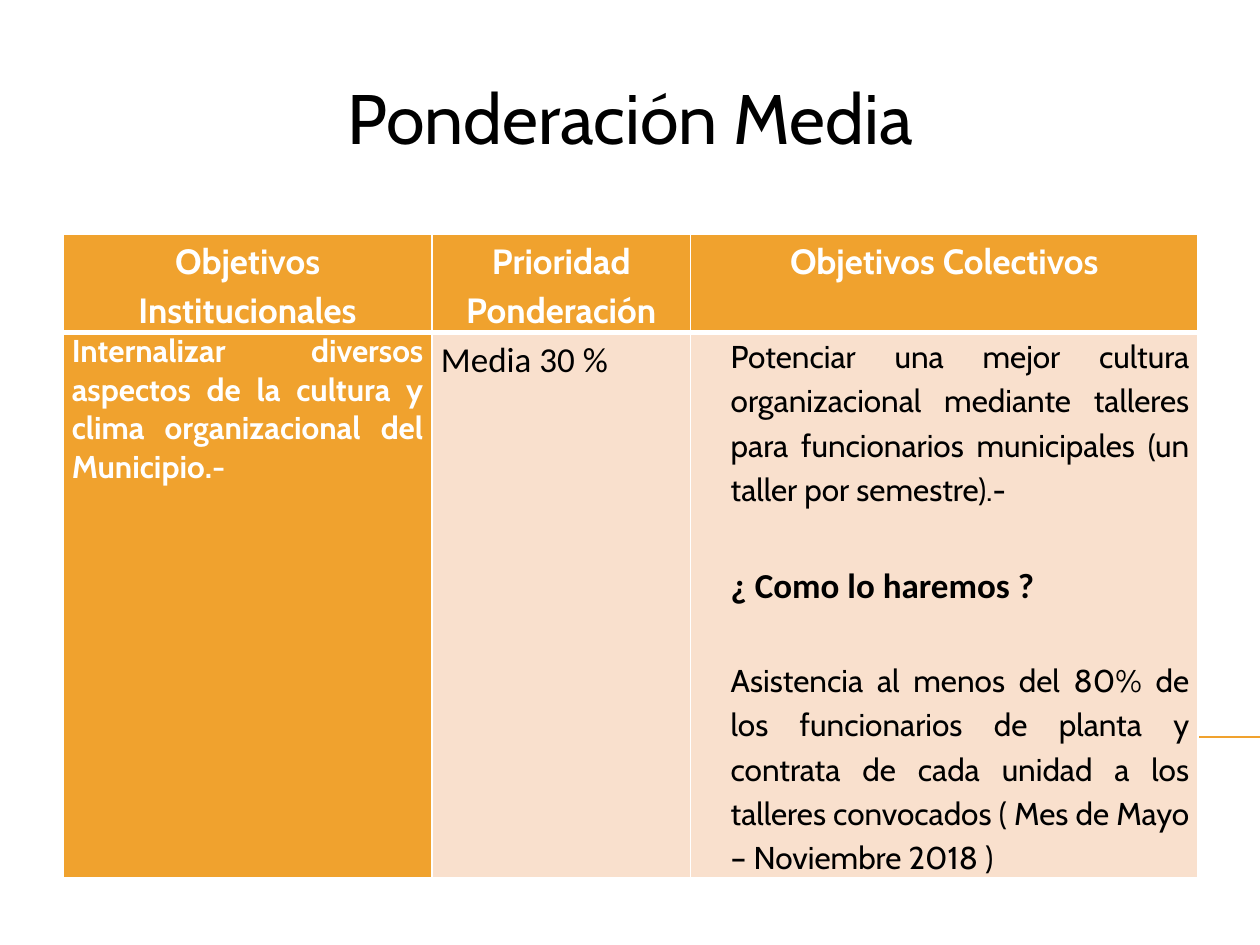
from lxml.etree import SubElement
from pptx import Presentation
from pptx.dml.color import RGBColor
from pptx.enum.shapes import MSO_CONNECTOR
from pptx.enum.text import MSO_ANCHOR, PP_ALIGN
from pptx.oxml import parse_xml
from pptx.oxml.ns import nsdecls, qn
from pptx.util import Inches, Pt

ORANGE, PEACH, WHITE, BLACK = "F0A22E", "F9E0CD", "FFFFFF", "000000"
COLUMN_WIDTHS = (2.93, 2.05, 4.03)
ROW_HEIGHTS = (0.63, 3.32)
HEADERS = ("Objetivos Institucionales", "Prioridad Ponderación", "Objetivos Colectivos")
INSTITUTIONAL_GOAL = (
    "Internalizar diversos aspectos de la cultura y clima organizacional del Municipio.-"
)
COLLECTIVE_GOAL = (
    "Potenciar una mejor cultura organizacional mediante talleres para funcionarios "
    "municipales (un taller por semestre).-"
)
ATTENDANCE_GOAL = (
    "Asistencia al menos del 80% de los funcionarios de planta y contrata de cada unidad "
    "a los talleres convocados ( Mes de Mayo – Noviembre 2018 )"
)


def rgb(hex_color):
    """Turn a hex string into a colour."""
    return RGBColor.from_string(hex_color)


def format_text(paragraph, size, font="Cabin", color=BLACK, bold=False,
                align=PP_ALIGN.JUSTIFY, line_spacing=1.15):
    """Format a paragraph and all its runs."""
    paragraph.alignment = align
    paragraph.line_spacing = line_spacing
    for run in paragraph.runs:
        run.font.size = Pt(size)
        run.font.name = font
        run.font.bold = bold
        run.font.color.rgb = rgb(color)


def set_borders(cell, top, bottom):
    """Draw white borders around a cell, with the given top and bottom widths."""
    properties = cell._tc.get_or_add_tcPr()
    widths = {"lnL": 1, "lnR": 1, "lnT": top, "lnB": bottom}
    for position, (tag, width) in enumerate(widths.items()):
        border = parse_xml(
            f'<a:{tag} {nsdecls("a")} w="{Pt(width)}"><a:solidFill>'
            f'<a:srgbClr val="{WHITE}"/></a:solidFill></a:{tag}>'
        )
        properties.insert(position, border)


def style_cell(cell, color, margin, top, bottom):
    """Set the fill, margins and borders of a cell."""
    cell.fill.solid()
    cell.fill.fore_color.rgb = rgb(color)
    cell.margin_left = cell.margin_right = Inches(margin)
    cell.margin_top = cell.margin_bottom = 0
    set_borders(cell, top, bottom)


def fill_collective_cell(cell):
    """Write the collective goals as indented, spaced paragraphs."""
    text_frame = cell.text_frame
    text_frame.text = "\n".join((COLLECTIVE_GOAL, "¿ Como lo haremos ?", ATTENDANCE_GOAL))
    goal, question, attendance = text_frame.paragraphs
    format_text(goal, 18)
    format_text(question, 20, "Calibri", bold=True)
    format_text(attendance, 18)
    question.space_before = attendance.space_before = Pt(28)
    for paragraph in text_frame.paragraphs:
        paragraph._p.get_or_add_pPr().set("marL", str(Inches(0.25)))
        paragraph._p.get_or_add_pPr().set("indent", "0")


def add_goals_table(slide):
    """Add the table of goals and their weighting."""
    table = slide.shapes.add_table(
        2, 3, Inches(0.5), Inches(1.86), Inches(sum(COLUMN_WIDTHS)), Inches(sum(ROW_HEIGHTS))
    ).table
    for column, width in zip(table.columns, COLUMN_WIDTHS):
        column.width = Inches(width)
    for row, height in zip(table.rows, ROW_HEIGHTS):
        row.height = Inches(height)
    for index, header in enumerate(HEADERS):
        cell = table.cell(0, index)
        style_cell(cell, ORANGE, 0.06, 1, 3)
        cell.text_frame.text = header
        format_text(cell.text_frame.paragraphs[0], 20, color=WHITE, bold=True,
                    align=PP_ALIGN.CENTER)
        style_cell(table.cell(1, index), PEACH if index else ORANGE, 0.07, 3, 1)
    institutional, weighting, collective = table.rows[1].cells
    institutional.text_frame.text = INSTITUTIONAL_GOAL
    format_text(institutional.text_frame.paragraphs[0], 18, color=WHITE, bold=True,
                line_spacing=1.0)
    weighting.text_frame.text = "Media 30 %"
    format_text(weighting.text_frame.paragraphs[0], 20, "Calibri")
    fill_collective_cell(collective)


def add_title(slide, text):
    """Add the centred slide title."""
    title = slide.shapes.add_textbox(Inches(0.5), Inches(0.3), Inches(9), Inches(1.25))
    text_frame = title.text_frame
    text_frame.word_wrap = True
    text_frame.vertical_anchor = MSO_ANCHOR.MIDDLE
    text_frame.text = text
    format_text(text_frame.paragraphs[0], 40, align=PP_ALIGN.CENTER, line_spacing=1.0)


def add_rule(slide):
    """Add the thin horizontal line that runs to the right edge."""
    rule = slide.shapes.add_connector(
        MSO_CONNECTOR.STRAIGHT, Inches(0.56), Inches(5.85), Inches(10), Inches(5.85)
    )
    rule.line.color.rgb = rgb(ORANGE)
    rule.line.width = Pt(0.75)
    SubElement(rule._element.spPr, qn("a:effectLst"))


def main():
    """Build and save the slide."""
    presentation = Presentation()
    presentation.slide_width = Inches(10)
    presentation.slide_height = Inches(7.5)
    slide = presentation.slides.add_slide(presentation.slide_layouts[6])
    add_rule(slide)
    add_goals_table(slide)
    add_title(slide, "Ponderación Media")
    presentation.save("out.pptx")


if __name__ == "__main__":
    main()
